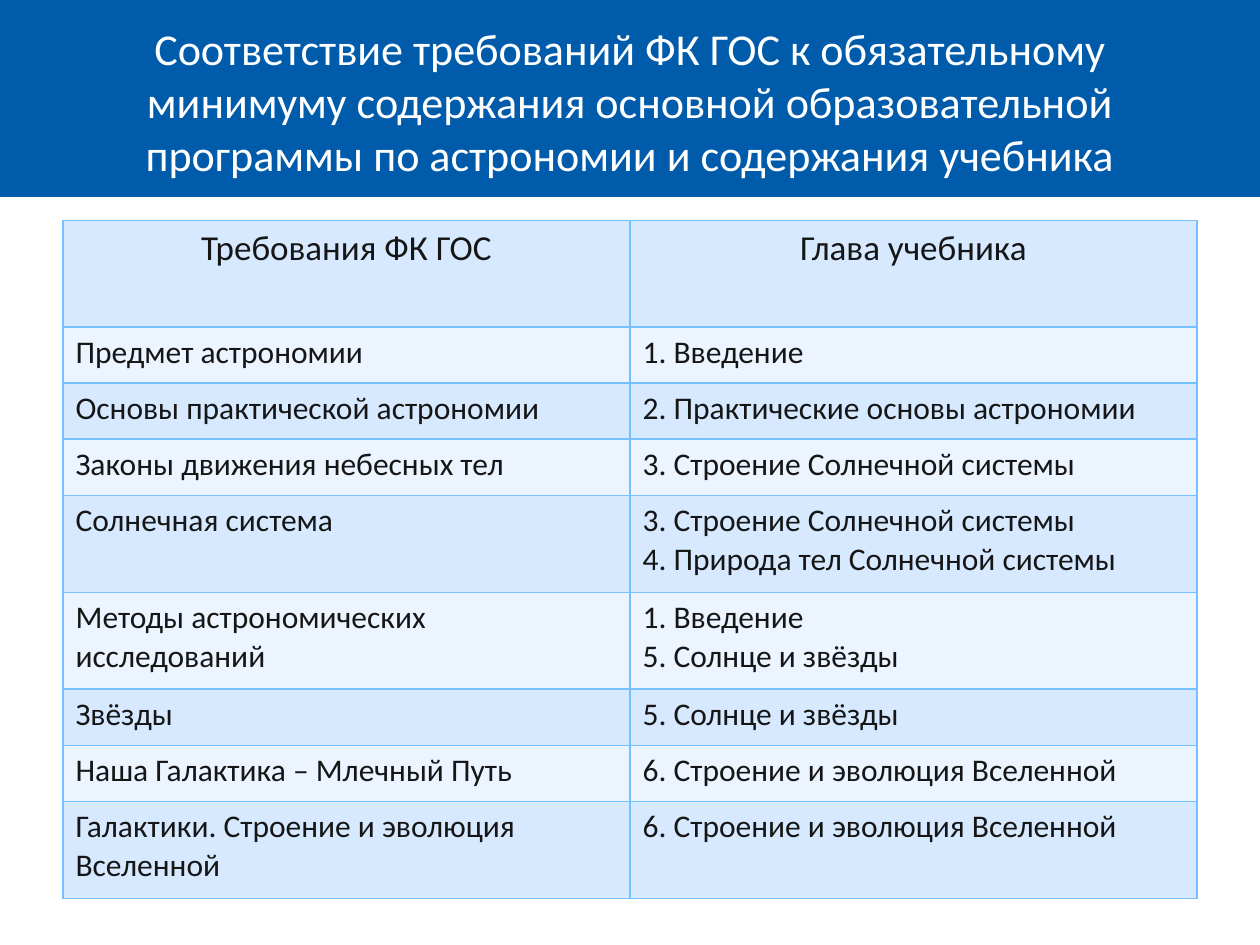
import pptx
import pptx.util
import pptx.dml.color
import pptx.enum.shapes
import pptx.enum.text
import pptx.oxml

Pt = pptx.util.Pt
Color = pptx.dml.color.RGBColor.from_string
Align = pptx.enum.text.PP_ALIGN
Anchor = pptx.enum.text.MSO_ANCHOR

title = ("Соответствие требований ФК ГОС к обязательному минимуму содержания "
         "основной образовательной программы по астрономии и содержания учебника")
heads = ("Требования ФК ГОС", "Глава учебника")
topics = [
    ("Предмет астрономии", ["1. Введение"], 1),
    ("Основы практической астрономии", ["2. Практические основы астрономии"], 1),
    ("Законы движения небесных тел", ["3. Строение Солнечной системы"], 1),
    ("Солнечная система",
     ["3. Строение Солнечной системы", "4. Природа тел Солнечной системы"], 2),
    ("Методы астрономических исследований", ["1. Введение", "5. Солнце и звёзды"], 2),
    ("Звёзды", ["5. Солнце и звёзды"], 1),
    ("Наша Галактика – Млечный Путь", ["6. Строение и эволюция Вселенной"], 1),
    ("Галактики. Строение и эволюция Вселенной", ["6. Строение и эволюция Вселенной"], 2),
]
theme = {
    "font": "Calibri", "band": "005CAB", "white": "FFFFFF", "ink": "161616",
    "rows": ("D6E9FF", "ECF4FF"), "edge": "75C1FF",
    "title": 25.2, "head": 20, "body": 18,
}
wide, high = 720, 540
left, top, span = 36, 126, 648
head_high, row_high, line_high = 60.8, 32.1, 23.3


def put(item, values):
    for name, value in values.items():
        setattr(item, name, value)


def write(frame, lines, size, ink, align):
    frame.text = "\n".join(lines)
    for para in frame.paragraphs:
        para.alignment = align
        put(para.font, {"name": theme["font"], "size": Pt(size), "bold": False})
        para.font.color.rgb = Color(ink)


def edge(cell):
    props = cell._tc.get_or_add_tcPr()
    for spot, side in enumerate("LRTB"):
        props.insert(spot, pptx.oxml.parse_xml(
            f'<a:ln{side} xmlns:a="http://schemas.openxmlformats.org/drawingml/2006/main" '
            f'w="{Pt(1)}"><a:solidFill><a:srgbClr val="{theme["edge"]}"/></a:solidFill>'
            f'</a:ln{side}>'))


def main():
    deck = pptx.Presentation()
    put(deck, {"slide_width": Pt(wide), "slide_height": Pt(high)})
    slide = deck.slides.add_slide(deck.slide_layouts[5])

    head = slide.shapes.title
    put(head, {"left": Pt(36), "top": Pt(16.5), "width": Pt(span), "height": Pt(90)})
    put(head.text_frame, {"word_wrap": True, "vertical_anchor": Anchor.BOTTOM,
                          "auto_size": pptx.enum.text.MSO_AUTO_SIZE.NONE})
    write(head.text_frame, [title], theme["title"], theme["white"], Align.CENTER)

    band = slide.shapes.add_shape(
        pptx.enum.shapes.MSO_SHAPE.RECTANGLE, 0, 0, Pt(wide), Pt(112.5))
    band.shadow.inherit = False
    band.fill.solid()
    band.fill.fore_color.rgb = Color(theme["band"])
    band.line.fill.background()
    head.element.addprevious(band.element)

    highs = [head_high] + [row_high + (count - 1) * line_high for _, _, count in topics]
    rows = [[[text] for text in heads]] + [[[topic], parts] for topic, parts, _ in topics]
    table = slide.shapes.add_table(
        len(rows), 2, Pt(left), Pt(top), Pt(span), Pt(sum(highs))).table
    for r, row in enumerate(rows):
        table.rows[r].height = Pt(highs[r])
        size, align = (theme["body"], Align.LEFT) if r else (theme["head"], Align.CENTER)
        for c, lines in enumerate(row):
            cell = table.cell(r, c)
            write(cell.text_frame, lines, size, theme["ink"], align)
            cell.fill.solid()
            cell.fill.fore_color.rgb = Color(theme["rows"][r % 2])
            edge(cell)

    deck.save("out.pptx")


if __name__ == "__main__":
    main()
